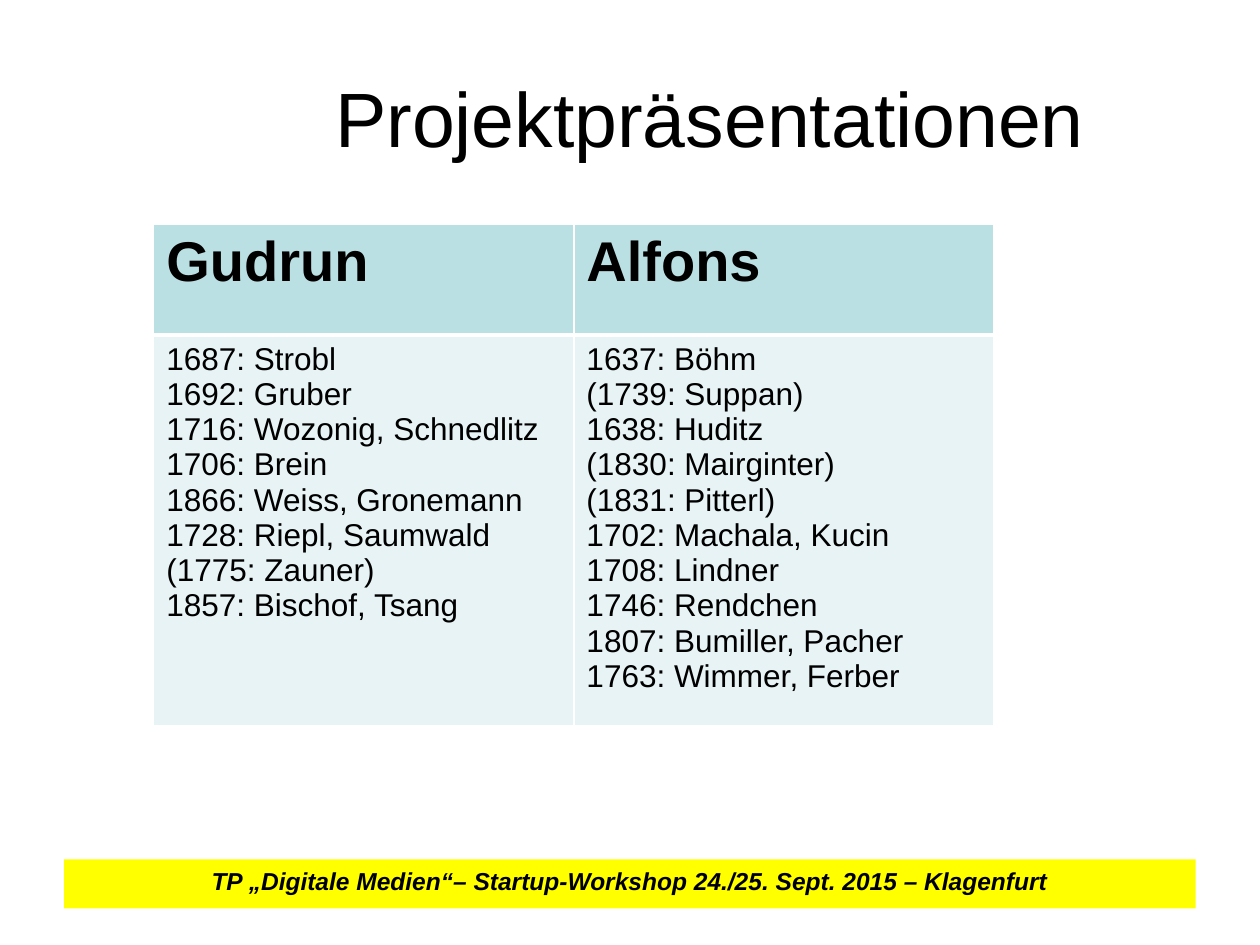
import pptx
import pptx.dml.color
import pptx.enum.shapes
import pptx.enum.text
import pptx.oxml
import pptx.oxml.ns
import pptx.util
from pptx.util import Inches

RGBColor = pptx.dml.color.RGBColor
ANCHOR = pptx.enum.text.MSO_ANCHOR
CENTER = pptx.enum.text.PP_ALIGN.CENTER

BLACK = RGBColor(0x00, 0x00, 0x00)
WHITE = RGBColor(0xFF, 0xFF, 0xFF)
YELLOW = RGBColor(0xFF, 0xFF, 0x00)
HEADER_FILL = RGBColor(0xBB, 0xE0, 0xE3)
BODY_FILL = RGBColor(0xE7, 0xF3, 0xF4)

PROJECTS = {
    "Gudrun": [
        "1687: Strobl", "1692: Gruber", "1716: Wozonig, Schnedlitz",
        "1706: Brein", "1866: Weiss, Gronemann", "1728: Riepl, Saumwald",
        "(1775: Zauner)", "1857: Bischof, Tsang",
    ],
    "Alfons": [
        "1637: Böhm", "(1739: Suppan)", "1638: Huditz",
        "(1830: Mairginter)", "(1831: Pitterl)", "1702: Machala, Kucin",
        "1708: Lindner", "1746: Rendchen", "1807: Bumiller, Pacher",
        "1763: Wimmer, Ferber",
    ],
}


class SlideBuilder:
    font_name = "Arial"

    def __init__(self, deck):
        self.slide = deck.slides.add_slide(deck.slide_layouts[6])

    def set_text(self, frame, text, size, align=None, bold=False, italic=False):
        frame.text = text
        for para in frame.paragraphs:
            para.alignment = align
            for span in para.runs:
                font = span.font
                font.name = self.font_name
                font.size = pptx.util.Pt(size)
                font.bold = bold
                font.italic = italic
                font.color.rgb = BLACK

    def title(self, text, left, top, width, height):
        box = self.slide.shapes.add_textbox(left, top, width, height)
        box.text_frame.word_wrap = True
        box.text_frame.vertical_anchor = ANCHOR.MIDDLE
        self.set_text(box.text_frame, text, 44, CENTER)

    def banner(self, text, left, top, width, height):
        bar = self.slide.shapes.add_shape(
            pptx.enum.shapes.MSO_SHAPE.RECTANGLE, left, top, width, height)
        bar.shadow.inherit = False
        bar.fill.solid()
        bar.fill.fore_color.rgb = YELLOW
        bar.line.fill.background()
        bar.text_frame.vertical_anchor = ANCHOR.TOP
        self.set_text(bar.text_frame, text, 14, CENTER, bold=True, italic=True)

    def border(self, cell, **widths):
        """Draw white cell borders; widths are points per side, in schema order."""
        properties = cell._tc.get_or_add_tcPr()
        for index, (side, points) in enumerate(widths.items()):
            line = pptx.oxml.parse_xml(
                f'<a:ln{side} {pptx.oxml.ns.nsdecls("a")} w="{pptx.util.Pt(points)}">'
                f'<a:solidFill><a:srgbClr val="{WHITE}"/></a:solidFill></a:ln{side}>')
            properties.insert(index, line)

    def cell(self, cell, text, size, fill, bold, top, bottom):
        self.set_text(cell.text_frame, text, size, bold=bold)
        cell.fill.solid()
        cell.fill.fore_color.rgb = fill
        self.border(cell, L=1, R=1, T=top, B=bottom)

    def table(self, columns, left, top, width, row_heights):
        table = self.slide.shapes.add_table(
            len(row_heights), len(columns), left, top, width, sum(row_heights)).table
        for row, height in zip(table.rows, row_heights):
            row.height = height
        for index, (name, entries) in enumerate(columns.items()):
            self.cell(table.cell(0, index), name, 32, HEADER_FILL, True, 1, 3)
            self.cell(table.cell(1, index), "\n".join(entries), 18, BODY_FILL, False, 3, 1)


def main():
    deck = pptx.Presentation()
    deck.slide_width, deck.slide_height = Inches(10), Inches(7.5)
    page = SlideBuilder(deck)
    page.title("Projektpräsentationen", Inches(1.77), Inches(0.3), Inches(7.73), Inches(1.25))
    page.banner("TP „Digitale Medien“– Startup-Workshop 24./25. Sept. 2015 – Klagenfurt",
                Inches(0.51), Inches(6.82), Inches(8.98), Inches(0.39))
    page.table(PROJECTS, Inches(1.22), Inches(1.78), Inches(6.67), [Inches(0.88), Inches(2.89)])
    deck.save("out.pptx")


if __name__ == "__main__":
    main()
